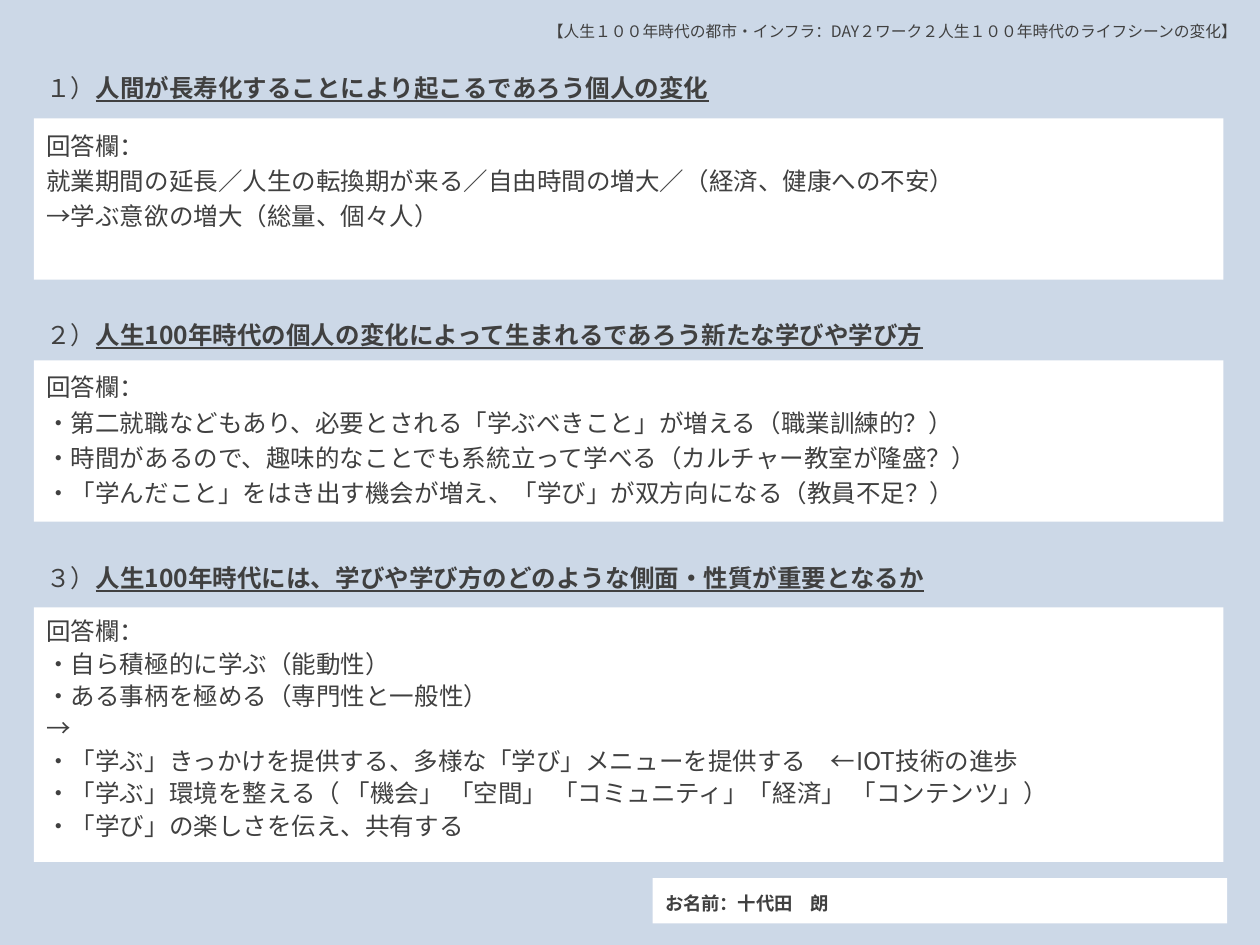
from lxml.etree import SubElement
from pptx import Presentation
from pptx.dml.color import RGBColor
from pptx.enum.shapes import MSO_SHAPE
from pptx.enum.text import MSO_ANCHOR, PP_ALIGN
from pptx.oxml.ns import qn
from pptx.util import Inches, Pt

FONT = "Noto Sans CJK JP"
INK, PAPER, BACK = "404040", "FFFFFF", "CCD8E7"
LEFT, WIDE = 0.27, 9.44
HEAD = "【人生１００年時代の都市・インフラ：DAY２ワーク２人生１００年時代のライフシーンの変化】"
NAME = "お名前：十代田　朗"
PARTS = [
    {"mark": "１）", "title": "人間が長寿化することにより起こるであろう個人の変化",
     "top": 0.48, "width": 5.6, "box": (0.94, 1.28), "space": 1.2,
     "lines": ["就業期間の延長／人生の転換期が来る／自由時間の増大／（経済、健康への不安）",
               "→学ぶ意欲の増大（総量、個々人）"]},
    {"mark": "２）", "title": "人生100年時代の個人の変化によって生まれるであろう新たな学びや学び方",
     "top": 2.44, "width": 8.38, "box": (2.86, 1.28), "space": 1.2,
     "lines": ["・第二就職などもあり、必要とされる「学ぶべきこと」が増える（職業訓練的？）",
               "・時間があるので、趣味的なことでも系統立って学べる（カルチャー教室が隆盛？）",
               "・「学んだこと」をはき出す機会が増え、「学び」が双方向になる（教員不足？）"]},
    {"mark": "３）", "title": "人生100年時代には、学びや学び方のどのような側面・性質が重要となるか",
     "top": 4.37, "width": 8.38, "box": (4.82, 2.02), "space": 1.1,
     "lines": ["・自ら積極的に学ぶ（能動性）",
               "・ある事柄を極める（専門性と一般性）",
               "→",
               "・「学ぶ」きっかけを提供する、多様な「学び」メニューを提供する　←IOT技術の進歩",
               "・「学ぶ」環境を整える（ 「機会」 「空間」 「コミュニティ」「経済」 「コンテンツ」）",
               "・「学び」の楽しさを伝え、共有する"]},
]


def paint(fill, color):
    fill.solid()
    fill.fore_color.rgb = RGBColor.from_string(color)


def write(shape, rows, size, space=1.2, anchor=MSO_ANCHOR.TOP):
    """Fill a shape with rows of (text, bold, underline) runs."""
    frame = shape.text_frame
    frame.word_wrap = True
    frame.vertical_anchor = anchor
    for i, row in enumerate(rows):
        para = frame.add_paragraph() if i else frame.paragraphs[0]
        para.alignment = PP_ALIGN.LEFT
        para.line_spacing = space
        for text, bold, under in row:
            run = para.add_run()
            run.text = text
            font = run.font
            font.name, font.size = FONT, Pt(size)
            font.bold, font.underline = bold, under
            paint(font.fill, INK)
            SubElement(run._r.get_or_add_rPr(), qn("a:ea"), typeface=FONT)


def add_label(slide, place, row, size):
    box = slide.shapes.add_textbox(*map(Inches, place))
    write(box, [row], size)


def add_panel(slide, place, rows, size, **style):
    box = slide.shapes.add_shape(MSO_SHAPE.RECTANGLE, *map(Inches, place))
    box.shadow.inherit = False
    paint(box.fill, PAPER)
    box.line.fill.background()
    write(box, rows, size, **style)


def main():
    deck = Presentation()
    deck.slide_width, deck.slide_height = Inches(10), Inches(7.5)
    slide = deck.slides.add_slide(deck.slide_layouts[6])
    paint(slide.background.fill, BACK)

    add_label(slide, (4.25, 0.09, 5.75, 0.36), [(HEAD, False, False)], 9)
    for part in PARTS:
        title = [(part["mark"], False, False), (part["title"], True, True)]
        add_label(slide, (LEFT, part["top"], part["width"], 0.45), title, 14)
        top, height = part["box"]
        rows = [[(line, False, False)] for line in ["回答欄：", *part["lines"]]]
        add_panel(slide, (LEFT, top, WIDE, height), rows, 14, space=part["space"])
    add_panel(slide, (5.18, 6.97, 4.56, 0.36), [[(NAME, True, False)]], 10.5,
              anchor=MSO_ANCHOR.MIDDLE)
    deck.save("out.pptx")


if __name__ == "__main__":
    main()
